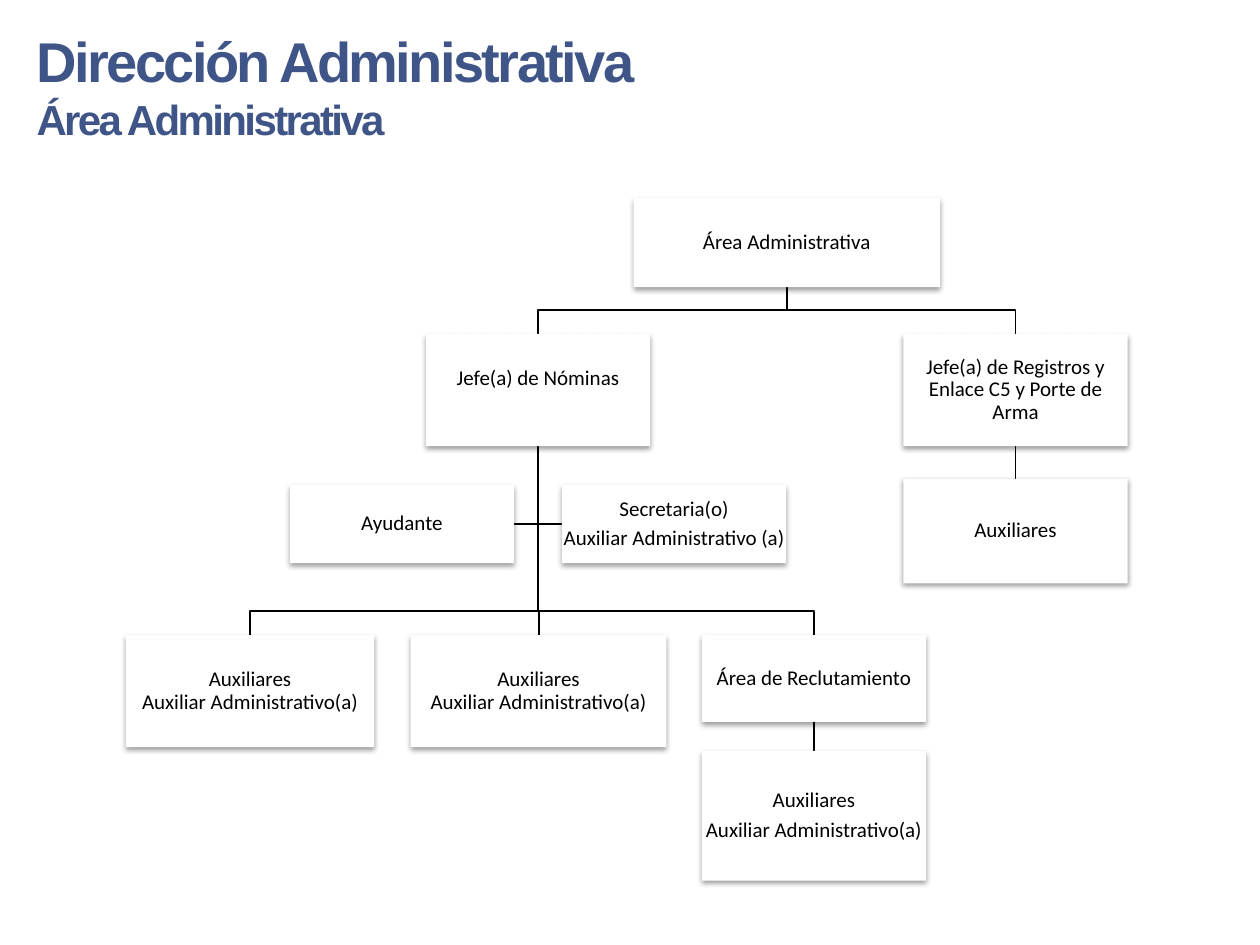
from lxml import etree
from pptx import Presentation
from pptx.dml.color import RGBColor
from pptx.enum.shapes import MSO_CONNECTOR as CONN, MSO_SHAPE as SHAPE
from pptx.enum.text import MSO_ANCHOR as ANCHOR, MSO_AUTO_SIZE as AUTO, PP_ALIGN as ALIGN
from pptx.oxml import parse_xml
from pptx.oxml.ns import nsdecls, qn
from pptx.util import Inches, Pt

BLUE = RGBColor(0x3F, 0x55, 0x88)
BLACK = RGBColor(0, 0, 0)
WHITE = RGBColor(0xFF, 0xFF, 0xFF)

# Content
TITLE = [("Dirección Administrativa", 32), ("Área Administrativa", 24)]
W = 1.78  # usual box width
ROW2, ROW4 = 2.65, 5.04
HELPERS = ["Auxiliares", "Auxiliar Administrativo(a)"]

# name: (left, top, width, height, lines, space after in points, bottom inset)
BOXES = {
    "area": (5.03, 1.57, 2.43, 0.71, ["Área Administrativa"], 0, 0.01),
    "payroll": (3.38, ROW2, W, 0.89, ["Jefe(a) de Nóminas"], 0, 0.19),
    "helpers 1": (1, ROW4, 1.97, 0.89, HELPERS, 0, 0.01),
    "helpers 2": (3.26, ROW4, 2.03, 0.89, HELPERS, 0, 0.01),
    "recruiting": (5.57, ROW4, W, 0.69, ["Área de Reclutamiento"], 0, 0.01),
    "recruiting helpers": (5.57, 5.96, W, 1.03, HELPERS, 4, 0.01),
    "assistant": (2.3, 3.85, W, 0.62, ["Ayudante"], 0, 0.01),
    "secretary": (4.46, 3.85, W, 0.62,
                  ["Secretaria(o)", "Auxiliar Administrativo (a)"], 4, 0.01),
    "records": (7.17, ROW2, W, 0.89,
                ["Jefe(a) de Registros y", "Enlace C5 y Porte de Arma"], 0, 0.01),
    "records helpers": (7.17, 3.8, W, 0.83, ["Auxiliares"], 0, 0.01),
}
BELOW = [("records", "records helpers"), ("area", "records"),
         ("recruiting", "recruiting helpers"), ("payroll", "recruiting"),
         ("payroll", "helpers 2"), ("payroll", "helpers 1"), ("area", "payroll")]
BESIDE = [("payroll", "secretary"), ("payroll", "assistant")]
ELBOW = 0.19  # height of the bend above a child box

SHADOW = (f'<a:effectLst {nsdecls("a")}><a:outerShdw blurRad="40000" dist="20000" '
          'dir="5400000" rotWithShape="0"><a:srgbClr val="000000">'
          '<a:alpha val="38000"/></a:srgbClr></a:outerShdw></a:effectLst>')

prs = Presentation()
prs.slide_width, prs.slide_height = Inches(10), Inches(7.5)
s = prs.slides.add_slide(prs.slide_layouts[5])


def set_attrs(obj, values):
    for name, value in values.items():
        setattr(obj, name, value)


def write(p, text, size, face, color, bold=False):
    r = p.add_run()
    r.text = text
    set_attrs(r.font, {"size": Pt(size), "name": face, "bold": bold})
    r.font.color.rgb = color
    return r


def paragraphs(tf, count):
    return [tf.paragraphs[0]] + [tf.add_paragraph() for _ in range(count - 1)]


def draw_line(points):
    points = [(Inches(x), Inches(y)) for x, y in points]
    if len(points) == 2:
        sp = s.shapes.add_connector(CONN.STRAIGHT, *points[0], *points[1])
        etree.SubElement(sp._element.spPr, qn("a:effectLst"))
    else:
        builder = s.shapes.build_freeform(*points[0])
        builder.add_line_segments(points[1:], close=False)
        sp = builder.convert_to_shape()
        sp.fill.background()
        sp.shadow.inherit = False
    sp.line.color.rgb = BLACK
    sp.line.width = Pt(1)


# Title
title = s.shapes.title
set_attrs(title, {"left": Inches(0.19), "top": Inches(0.16),
                  "width": Inches(7.46), "height": Inches(1.04)})
tf = title.text_frame
set_attrs(tf, {"word_wrap": True, "vertical_anchor": ANCHOR.TOP,
               "auto_size": AUTO.SHAPE_TO_FIT_TEXT})
for p, (text, size) in zip(paragraphs(tf, len(TITLE)), TITLE):
    p.alignment = ALIGN.LEFT
    r = write(p, text, size, "Arial", BLUE, True)
    r.font._element.set("spc", "-150")

# Lines, behind the boxes
for parent, child in BELOW:
    px, py, pw, ph = BOXES[parent][:4]
    cx, cy, cw = BOXES[child][:3]
    start, end = (px + pw / 2, py + ph), (cx + cw / 2, cy)
    bend = cy - ELBOW
    same = abs(start[0] - end[0]) < 0.001
    draw_line([start, end] if same else
              [start, (start[0], bend), (end[0], bend), end])
for parent, child in BESIDE:
    px, py, pw, ph = BOXES[parent][:4]
    cx, cy, cw, ch = BOXES[child][:4]
    trunk, middle = px + pw / 2, cy + ch / 2
    edge = cx if cx > trunk else cx + cw
    draw_line([(trunk, py + ph), (trunk, middle), (edge, middle)])

# Boxes
for x, y, w, h, lines, after, bottom in BOXES.values():
    sp = s.shapes.add_shape(SHAPE.RECTANGLE, *map(Inches, (x, y, w, h)))
    sp.fill.solid()
    sp.fill.fore_color.rgb = WHITE
    sp.line.fill.background()
    sp._element.spPr.append(parse_xml(SHADOW))
    tf = sp.text_frame
    inset = Inches(0.01)
    set_attrs(tf, {"word_wrap": True, "vertical_anchor": ANCHOR.MIDDLE,
                   "margin_left": inset, "margin_right": inset,
                   "margin_top": inset, "margin_bottom": Inches(bottom)})
    for p, text in zip(paragraphs(tf, len(lines)), lines):
        set_attrs(p, {"alignment": ALIGN.CENTER, "line_spacing": 0.9,
                      "space_after": Pt(after)})
        write(p, text, 12, "Calibri", BLACK)

prs.save("out.pptx")
